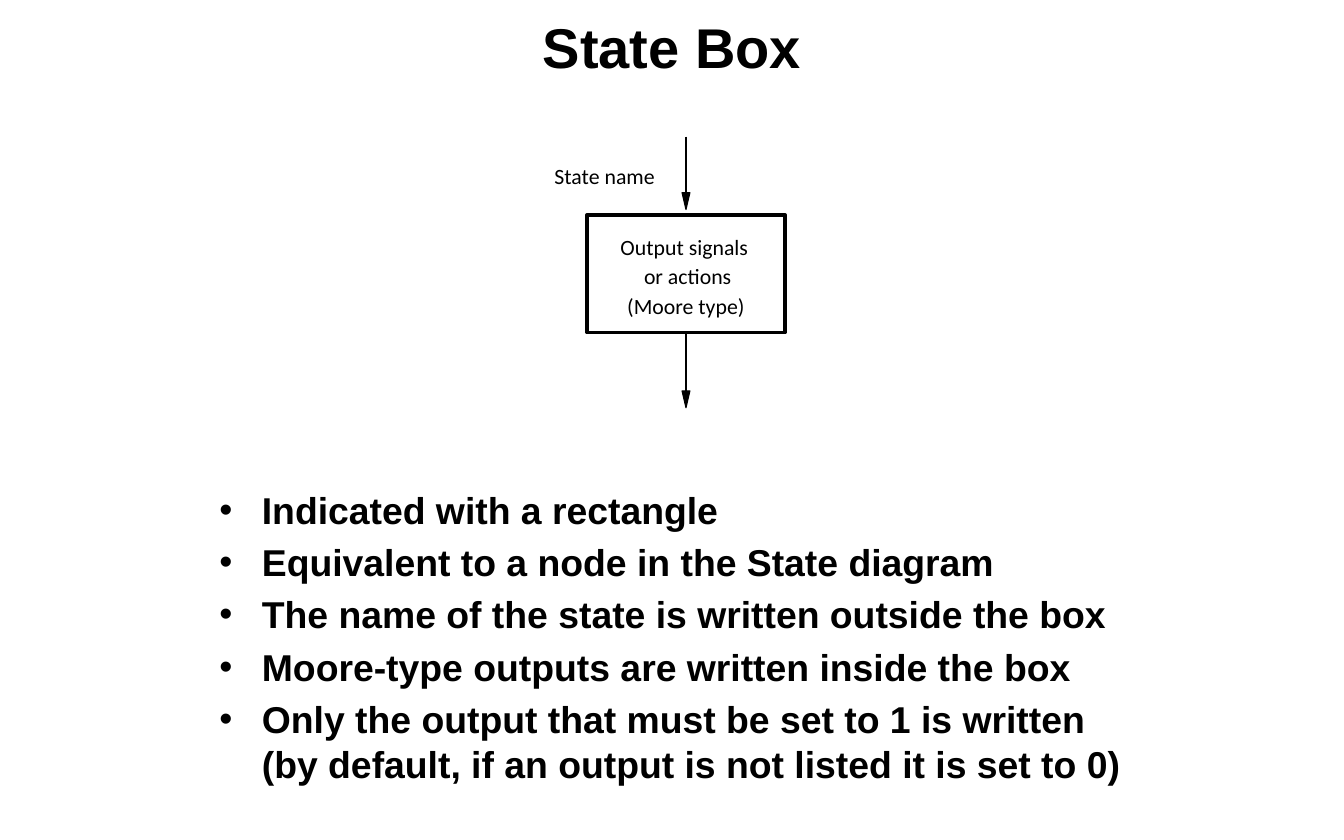
from pptx import Presentation
from pptx.dml.color import RGBColor
from pptx.enum import shapes, text
from pptx.oxml.ns import qn
from pptx.util import Inches, Pt

BLACK = RGBColor(0, 0, 0)

# Content
TITLE = "State Box"
BULLETS = [
    "Indicated with a rectangle",
    "Equivalent to a node in the State diagram",
    "The name of the state is written outside the box",
    "Moore-type outputs are written inside the box",
    "Only the output that must be set to 1 is written\v"
    "(by default, if an output is not listed it is set to 0)",
]
LABELS = [  # wording, left, top, width
    ("State name", 4.95, 1.45, 0.91),
    ("Output signals", 5.54, 2.09, 1.15),
    ("or actions", 5.75, 2.35, 0.79),
    ("(Moore type)", 5.6, 2.61, 1.06),
]
BOX_LEFT, BOX_TOP, BOX_W, BOX_H = 5.24, 1.92, 1.77, 1.05
CENTER = BOX_LEFT + BOX_W / 2
HEAD_W, HEAD_H = 0.07, 0.15
ARROWS = [(1.22, 1.72), (BOX_TOP + BOX_H, 3.49)]  # top and bottom of each shaft


def style(p, font, size, bold=False):
    for r in p.runs:
        r.font.name, r.font.size, r.font.bold = font, Pt(size), bold
        r.font.color.rgb = BLACK


def add_arrow(s, top, bottom):
    line = s.shapes.add_connector(shapes.MSO_CONNECTOR.STRAIGHT, Inches(CENTER),
                                  Inches(top), Inches(CENTER), Inches(bottom))
    line.line.color.rgb = BLACK
    line.line.width = Pt(1.5)
    sp_pr = line._element.spPr
    sp_pr.append(sp_pr.makeelement(qn("a:effectLst"), {}))

    left = CENTER - HEAD_W / 2
    fb = s.shapes.build_freeform(Inches(left), Inches(bottom))
    fb.add_line_segments([(Inches(CENTER), Inches(bottom + HEAD_H)),
                          (Inches(left + HEAD_W), Inches(bottom))])
    head = fb.convert_to_shape()
    head.shadow.inherit = False
    head.fill.solid()
    head.fill.fore_color.rgb = BLACK
    head.line.color.rgb = BLACK
    head.line.width = Pt(0)
    return line


prs = Presentation()
prs.slide_width, prs.slide_height = Inches(12), Inches(7.5)
s = prs.slides.add_slide(prs.slide_layouts[5])

# Title
title = s.shapes.title
title.left, title.top, title.width, title.height = map(Inches, (1, 0.04, 10, 0.75))
tf = title.text_frame
tf.text = TITLE
tf.vertical_anchor = text.MSO_ANCHOR.MIDDLE
tf.paragraphs[0].alignment = text.PP_ALIGN.CENTER
style(tf.paragraphs[0], "Arial", 36, True)

# State box and its arrows
box = s.shapes.add_shape(shapes.MSO_SHAPE.RECTANGLE,
                         *map(Inches, (BOX_LEFT, BOX_TOP, BOX_W, BOX_H)))
box.shadow.inherit = False
box.fill.background()
box.line.color.rgb = BLACK
box.line.width = Pt(2.25)
entry, leaving = [add_arrow(s, *ends) for ends in ARROWS]
leaving.begin_connect(box, 2)

# Diagram labels
for words, left, top, width in LABELS:
    tf = s.shapes.add_textbox(*map(Inches, (left, top, width, 0.24))).text_frame
    tf.margin_left = tf.margin_right = tf.margin_top = tf.margin_bottom = 0
    tf.word_wrap = False
    tf.auto_size = text.MSO_AUTO_SIZE.SHAPE_TO_FIT_TEXT
    tf.text = words
    style(tf.paragraphs[0], "Calibri", 14)

# Bullet list
tf = s.shapes.add_textbox(*map(Inches, (1.86, 4.3, 9.08, 2.83))).text_frame
tf.word_wrap = True
for i, words in enumerate(BULLETS):
    p = tf.add_paragraph() if i else tf.paragraphs[0]
    p.text = words
    p.space_before = Pt(4.8)
    style(p, "Arial", 24, True)
    p_pr = p._p.get_or_add_pPr()
    p_pr.set("marL", str(Inches(0.38)))
    p_pr.set("indent", str(-Inches(0.38)))
    p_pr.append(p_pr.makeelement(qn("a:buFont"), {"typeface": "Arial"}))
    p_pr.append(p_pr.makeelement(qn("a:buChar"), {"char": "•"}))

prs.save("out.pptx")
